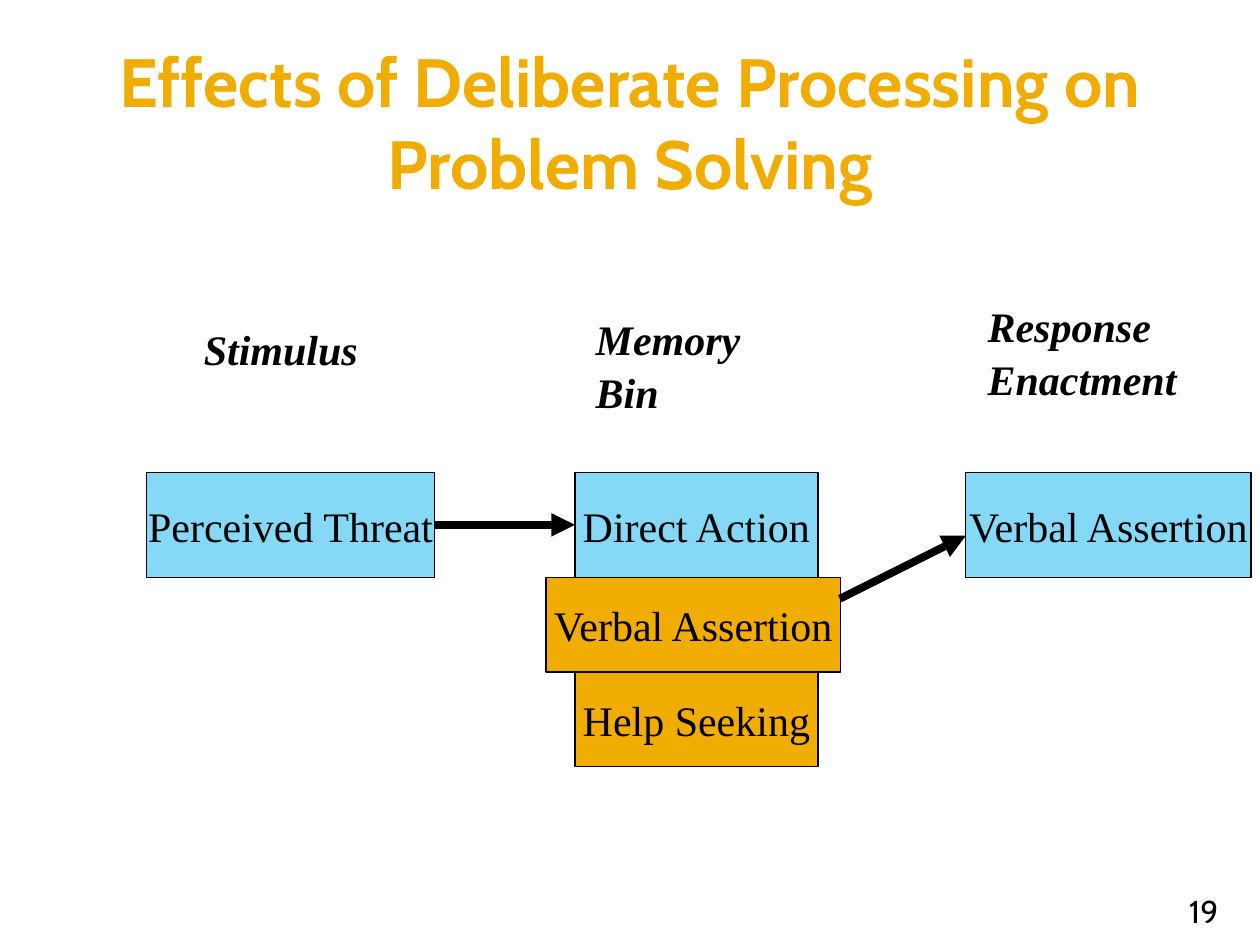
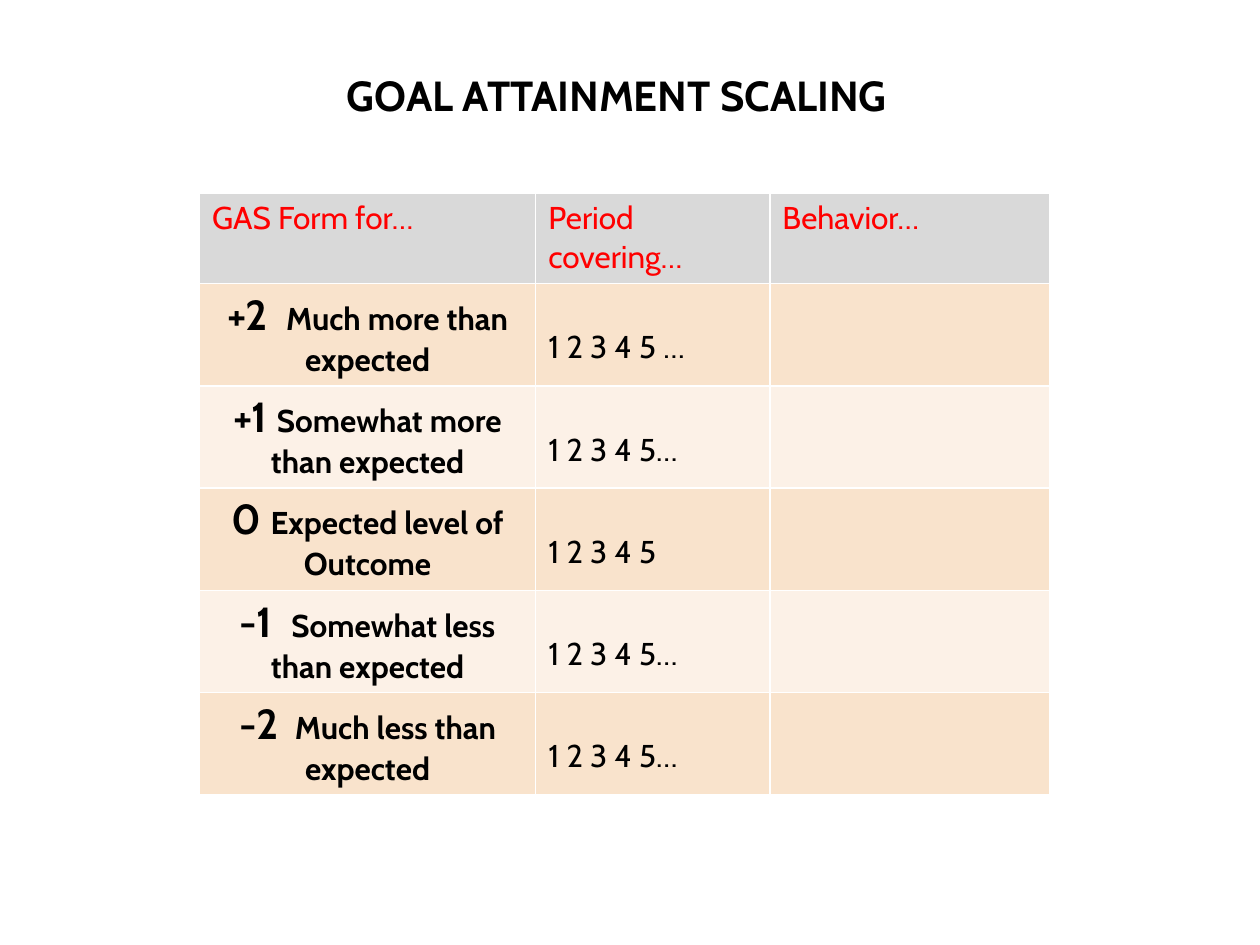
import pptx
import pptx.dml.color
import pptx.enum.shapes
import pptx.enum.text
import pptx.oxml
import pptx.oxml.ns
import pptx.util
from pptx.util import Cm

# Shared look
HEADING_FONT = "Cabin"
DIAGRAM_FONT = "Times New Roman"
BLACK, WHITE, RED = "000000", "FFFFFF", "FF0000"
GOLD, BLUE = "F0AD00", "00B0F0"
HEADER_GREY, DARK_BAND, LIGHT_BAND = "D9D9D9", "F9E3CC", "FCF1E7"
LEFT = pptx.enum.text.PP_ALIGN.LEFT
CENTER = pptx.enum.text.PP_ALIGN.CENTER
RIGHT = pptx.enum.text.PP_ALIGN.RIGHT
TOP = pptx.enum.text.MSO_ANCHOR.TOP
MIDDLE = pptx.enum.text.MSO_ANCHOR.MIDDLE
BOTTOM = pptx.enum.text.MSO_ANCHOR.BOTTOM


def color(hex_string):
    return pptx.dml.color.RGBColor.from_string(hex_string)


def write(frame, text, size, font=HEADING_FONT, fill=BLACK, bold=False,
          align=LEFT, anchor=TOP, wrap=True):
    """Fill a text frame with one formatted paragraph and return it."""
    frame.word_wrap = wrap
    frame.auto_size = pptx.enum.text.MSO_AUTO_SIZE.NONE
    frame.vertical_anchor = anchor
    paragraph = frame.paragraphs[0]
    paragraph.text = text
    paragraph.alignment = align
    paragraph.font.name = font
    paragraph.font.size = pptx.util.Pt(size)
    paragraph.font.bold = bold
    paragraph.font.color.rgb = color(fill)
    return paragraph


presentation = pptx.Presentation()
presentation.slide_width = Cm(25.4)
presentation.slide_height = Cm(19.05)

# Slides with their titles: text, size, colour, left, top, width, height
titles = [
    ("Effects of Deliberate Processing on Problem Solving", 39, GOLD, 0, 0, 25.4, 4.88),
    ("GOAL ATTAINMENT SCALING", 24, BLACK, 5.92, 1.27, 13.03, 1.27),
]
slides = []
for text, size, fill, left, top, width, height in titles:
    slide = presentation.slides.add_slide(presentation.slide_layouts[5])
    title = slide.shapes.title
    title.left, title.top = Cm(left), Cm(top)
    title.width, title.height = Cm(width), Cm(height)
    write(title.text_frame, text, size, fill=fill, bold=True, align=CENTER, anchor=MIDDLE)
    slides.append(slide)
diagram_slide, scaling_slide = slides

# Diagram: slide number
number = diagram_slide.shapes.add_textbox(Cm(22.78), Cm(17.98), Cm(2.03), Cm(0.76))
number.text_frame.margin_bottom = 0
write(number.text_frame, "19", 18, align=RIGHT, anchor=BOTTOM)

# Diagram: boxes, the blue ones half transparent
boxes = [
    ("Perceived Threat", BLUE, 2.96, 9.53, 5.8, 2.12),
    ("Direct Action", BLUE, 11.59, 9.53, 4.9, 2.12),
    ("Verbal Assertion", GOLD, 11.01, 11.64, 5.93, 1.91),
    ("Help Seeking", GOLD, 11.59, 13.55, 4.9, 1.9),
    ("Verbal Assertion", BLUE, 19.47, 9.53, 5.75, 2.12),
]
for text, fill, left, top, width, height in boxes:
    box = diagram_slide.shapes.add_shape(
        pptx.enum.shapes.MSO_SHAPE.RECTANGLE, Cm(left), Cm(top), Cm(width), Cm(height))
    box.shadow.inherit = False
    box.fill.solid()
    box.fill.fore_color.rgb = color(fill)
    if fill == BLUE:
        solid_color = box.fill._xPr.find(".//" + pptx.oxml.ns.qn("a:srgbClr"))
        solid_color.append(pptx.oxml.parse_xml(
            f'<a:alpha {pptx.oxml.ns.nsdecls("a")} val="48000"/>'))
    box.line.color.rgb = color(BLACK)
    box.line.width = pptx.util.Pt(0.75)
    write(box.text_frame, text, 24, DIAGRAM_FONT, align=CENTER, anchor=MIDDLE, wrap=False)

# Diagram: column labels
labels = [
    ("Stimulus", 3.86, 6.35, 4.9, 1.27),
    ("Memory Bin", 11.76, 6.15, 4.52, 2.29),
    ("Response Enactment", 19.66, 5.89, 4.85, 2.31),
]
for text, left, top, width, height in labels:
    label = diagram_slide.shapes.add_textbox(Cm(left), Cm(top), Cm(width), Cm(height))
    paragraph = write(label.text_frame, text, 24, DIAGRAM_FONT, bold=True)
    paragraph.font.italic = True
    paragraph.line_spacing = 1.05

# Diagram: arrows
for start_x, start_y, end_x, end_y in [(8.75, 10.58, 11.59, 10.58),
                                       (16.93, 12.07, 19.47, 10.8)]:
    arrow = diagram_slide.shapes.add_connector(
        pptx.enum.shapes.MSO_CONNECTOR.STRAIGHT,
        Cm(start_x), Cm(start_y), Cm(end_x), Cm(end_y))
    arrow.line.color.rgb = color(BLACK)
    arrow.line.width = pptx.util.Pt(4.5)
    arrow.line._get_or_add_ln().append(pptx.oxml.parse_xml(
        f'<a:tailEnd {pptx.oxml.ns.nsdecls("a")} type="triangle"/>'))
    arrow._element.spPr.append(pptx.oxml.parse_xml(
        f'<a:effectLst {pptx.oxml.ns.nsdecls("a")}/>'))

# Scaling table: frame and sizes
headers = ["GAS Form for…", "Period covering…", "Behavior…"]
levels = [
    ("+2  ", "Much more than expected", "1 2 3 4 5 …"),
    ("+1 ", "Somewhat more than expected", "1 2 3 4 5…"),
    ("0 ", "Expected level of Outcome", "1 2 3 4 5"),
    ("-1  ", "Somewhat less than expected", "1 2 3 4 5…"),
    ("-2 ", " Much less than expected", "1 2 3 4 5…"),
]
header_height, level_height = 1.83, 2.06
table = scaling_slide.shapes.add_table(
    len(levels) + 1, len(headers), Cm(4.02), Cm(3.89), Cm(17.14),
    Cm(header_height + level_height * len(levels))).table
table.first_row = table.horz_banding = False
for column, width in zip(table.columns, [6.78, 4.72, 5.64]):
    column.width = Cm(width)
for index, row in enumerate(table.rows):
    row.height = Cm(level_height if index else header_height)

# Scaling table: texts
for column, header in enumerate(headers):
    write(table.cell(0, column).text_frame, header, 18, fill=RED)
for row, (score, meaning, periods) in enumerate(levels, start=1):
    paragraph = write(table.cell(row, 0).text_frame, score, 18, bold=True, align=CENTER)
    paragraph.runs[0].font.size = pptx.util.Pt(24)
    paragraph.add_run().text = meaning
    for run in paragraph.runs:
        run.font.name = HEADING_FONT
        run.font.bold = True
    period_cell = table.cell(row, 1)
    period_cell.margin_top = Cm(0.9)
    write(period_cell.text_frame, periods, 18)

# Scaling table: fills and white borders
for row_index, row in enumerate(table.rows):
    band = DARK_BAND if row_index % 2 else LIGHT_BAND
    for cell in row.cells:
        properties = cell._tc.get_or_add_tcPr()
        for side in ("lnL", "lnR", "lnT", "lnB"):
            properties.append(pptx.oxml.parse_xml(
                f'<a:{side} {pptx.oxml.ns.nsdecls("a")} w="12700"><a:solidFill>'
                f'<a:srgbClr val="{WHITE}"/></a:solidFill></a:{side}>'))
        cell.fill.solid()
        cell.fill.fore_color.rgb = color(band if row_index else HEADER_GREY)

presentation.save("out.pptx")
